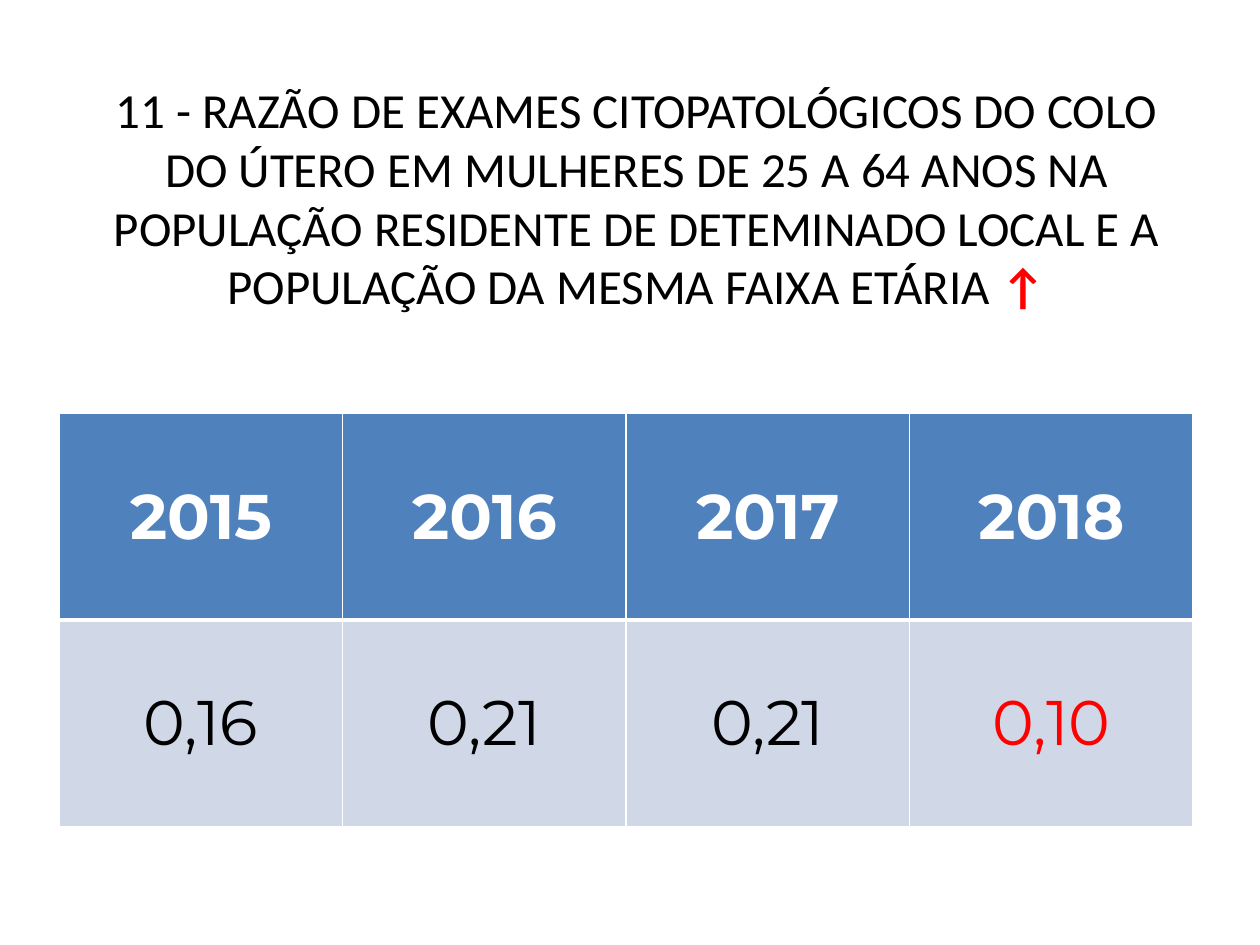
from lxml.etree import SubElement
from pptx import Presentation
from pptx.dml.color import RGBColor
from pptx.enum.text import MSO_ANCHOR, PP_ALIGN
from pptx.oxml.ns import qn
from pptx.util import Inches, Pt

BLACK = RGBColor(0x00, 0x00, 0x00)
WHITE = RGBColor(0xFF, 0xFF, 0xFF)
RED = RGBColor(0xFF, 0x00, 0x00)
BLUE = RGBColor(0x4F, 0x81, 0xBD)
PALE = RGBColor(0xD0, 0xD8, 0xE8)

TITLE = ("11 - RAZÃO DE EXAMES CITOPATOLÓGICOS DO COLO DO ÚTERO EM MULHERES "
         "DE 25 A 64 ANOS NA POPULAÇÃO RESIDENTE DE DETEMINADO LOCAL E A "
         "POPULAÇÃO DA MESMA FAIXA ETÁRIA ")
RATES = [("2015", "0,16"), ("2016", "0,21"), ("2017", "0,21"), ("2018", "0,10")]


def add_run(para, text, face, size, color, bold=False):
    run = para.add_run()
    run.text = text
    font = run.font
    font.name, font.size, font.bold = face, Pt(size), bold
    font.color.rgb = color


def add_edges(cell, widths):
    props = cell._tc.get_or_add_tcPr()
    for side, width in widths.items():
        line = SubElement(props, qn(f"a:ln{side}"), w=str(Pt(width)))
        fill = SubElement(line, qn("a:solidFill"))
        SubElement(fill, qn("a:srgbClr"), val=str(WHITE))


def fill_cell(cell, text, fill, color, bold, widths):
    add_edges(cell, widths)
    cell.fill.solid()
    cell.fill.fore_color.rgb = fill
    cell.vertical_anchor = MSO_ANCHOR.MIDDLE
    para = cell.text_frame.paragraphs[0]
    para.alignment = PP_ALIGN.CENTER
    add_run(para, text, "Montserrat", 36, color, bold)


def set_title(slide, left, top, width, height):
    title = slide.shapes.title
    title.left, title.top, title.width, title.height = left, top, width, height
    frame = title.text_frame
    frame.word_wrap = True
    frame.vertical_anchor = MSO_ANCHOR.MIDDLE
    para = frame.paragraphs[0]
    para.alignment = PP_ALIGN.CENTER
    add_run(para, TITLE, "Calibri", 28, BLACK)
    add_run(para, "↑", "Calibri", 28, RED, True)


def add_rates(slide, left, top, width, height):
    table = slide.shapes.add_table(2, len(RATES), left, top, width, height).table
    for col, (year, rate) in enumerate(RATES):
        # Header row, with a thick rule below
        fill_cell(table.cell(0, col), year, BLUE, WHITE, True,
                  {"L": 1, "R": 1, "T": 1, "B": 3})
        # Value row, with the latest year in red
        color = RED if col == len(RATES) - 1 else BLACK
        fill_cell(table.cell(1, col), rate, PALE, color, False,
                  {"L": 1, "R": 1, "T": 3, "B": 1})


def main():
    deck = Presentation()
    deck.slide_width, deck.slide_height = Inches(10), Inches(7.5)
    slide = deck.slides.add_slide(deck.slide_layouts.get_by_name("Title Only"))
    slide.background.fill.solid()
    slide.background.fill.fore_color.rgb = WHITE
    set_title(slide, Inches(0.55), Inches(0.16), Inches(9), Inches(2.81))
    add_rates(slide, Inches(0.47), Inches(3.28), Inches(9), Inches(3.28))
    deck.save("out.pptx")


if __name__ == "__main__":
    main()
